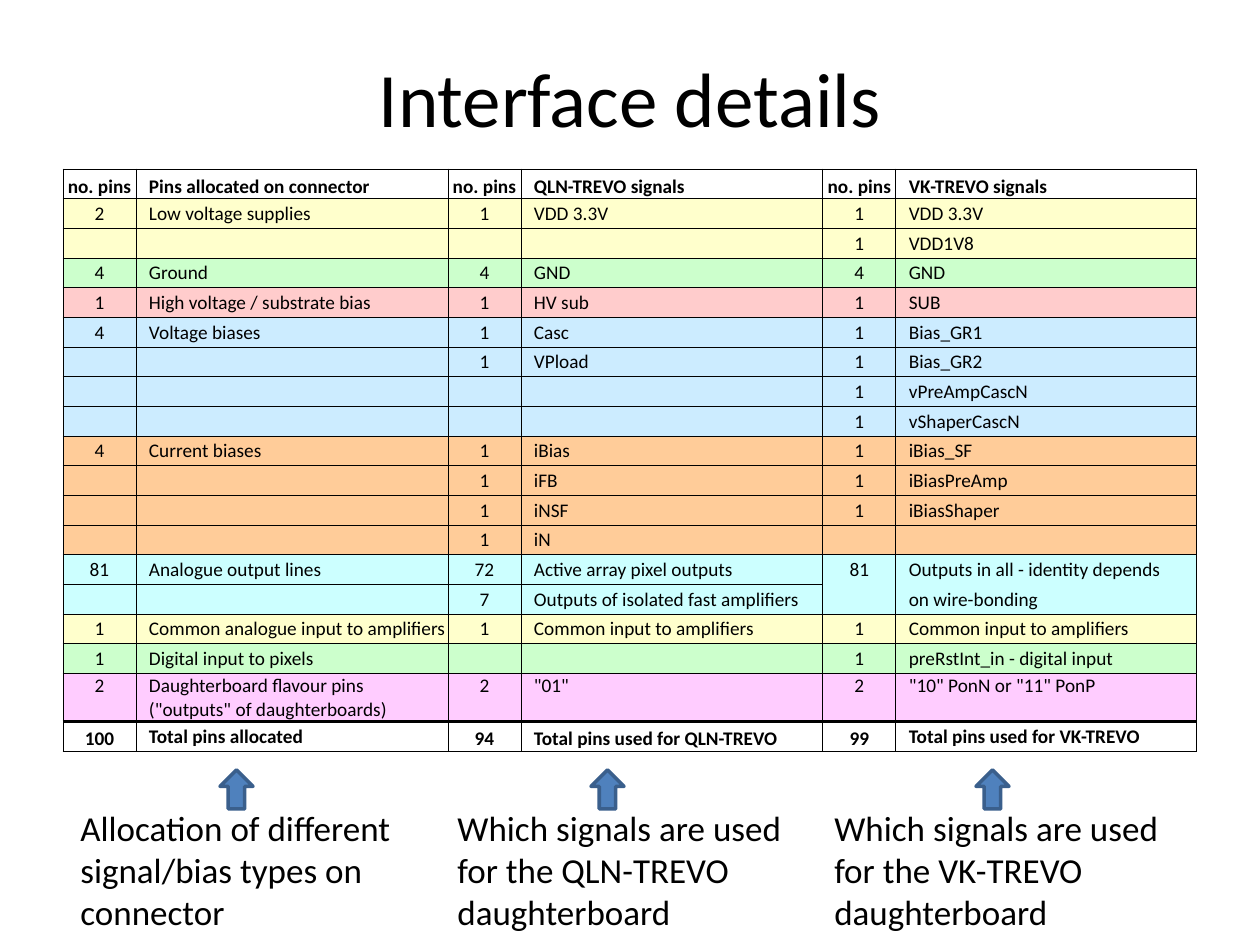
from lxml.etree import SubElement as Sub
from pptx import Presentation
from pptx.dml.color import RGBColor as RGB
from pptx.enum.shapes import MSO_SHAPE as Shape
from pptx.enum.text import MSO_ANCHOR as Anchor, PP_ALIGN as Align
from pptx.oxml.ns import qn
from pptx.util import Pt

HUES = {
    "ink": "000000", "yellow": "FFFFCC", "green": "CCFFCC", "pink": "FFCCCC",
    "blue": "CCECFF", "orange": "FFCC99", "cyan": "CCFFFF", "mauve": "FFCCFF",
    "arrow": "4F81BD", "edge": "3A5F8C",
}
FONT = "Calibri"


def px(n):
    return round(n * 914400 / 126)


def write(par, text, size, bold=False):
    """Add text to a paragraph, one run per line."""
    for i, line in enumerate(text.split("\n")):
        if i:
            par.add_line_break()
        run = par.add_run()
        run.text = line
        run.font.name, run.font.size, run.font.bold = FONT, Pt(size), bold
        run.font.color.rgb = RGB.from_string(HUES["ink"])


deck = Presentation()
deck.slide_width, deck.slide_height = px(1260), px(945)
slide = deck.slides.add_slide(deck.slide_layouts[6])

# Title and captions: left, top, width, height, size, align, text
notes = [
    "Allocation of different signal/bias types on connector",
    "Which signals are used for the QLN-TREVO daughterboard",
    "Which signals are used for the VK-TREVO daughterboard",
]
texts = [(63, 18, 1134, 158, 44, Align.CENTER, "Interface details")]
texts += [(68 + 377 * i, 800, 377, 139, 20, Align.LEFT, note)
          for i, note in enumerate(notes)]
for x, y, w, h, size, align, text in texts:
    frame = slide.shapes.add_textbox(px(x), px(y), px(w), px(h)).text_frame
    frame.word_wrap = True
    frame.vertical_anchor = Anchor.MIDDLE
    frame.paragraphs[0].alignment = align
    write(frame.paragraphs[0], text, size)

# Table content: row colour, then three pairs of pin count and label
rows = [
    (None, "no. pins", "Pins allocated on connector",
     "no. pins", "QLN-TREVO signals", "no. pins", "VK-TREVO signals"),
    ("yellow", "2", "Low voltage supplies", "1", "VDD 3.3V", "1", "VDD 3.3V"),
    ("yellow", "", "", "", "", "1", "VDD1V8"),
    ("green", "4", "Ground", "4", "GND", "4", "GND"),
    ("pink", "1", "High voltage / substrate bias", "1", "HV sub", "1", "SUB"),
    ("blue", "4", "Voltage biases", "1", "Casc", "1", "Bias_GR1"),
    ("blue", "", "", "1", "VPload", "1", "Bias_GR2"),
    ("blue", "", "", "", "", "1", "vPreAmpCascN"),
    ("blue", "", "", "", "", "1", "vShaperCascN"),
    ("orange", "4", "Current biases", "1", "iBias", "1", "iBias_SF"),
    ("orange", "", "", "1", "iFB", "1", "iBiasPreAmp"),
    ("orange", "", "", "1", "iNSF", "1", "iBiasShaper"),
    ("orange", "", "", "1", "iN", "", ""),
    ("cyan", "81", "Analogue output lines", "72", "Active array pixel outputs",
     "81", "Outputs in all - identity depends"),
    ("cyan", "", "", "7", "Outputs of isolated fast amplifiers",
     "", "on wire-bonding"),
    ("yellow", "1", "Common analogue input to amplifiers",
     "1", "Common input to amplifiers", "1", "Common input to amplifiers"),
    ("green", "1", "Digital input to pixels", "", "",
     "1", "preRstInt_in - digital input"),
    ("mauve", "2", 'Daughterboard flavour pins\n("outputs" of daughterboards)',
     "2", '"01"', "2", '"10" PonN or "11" PonP'),
    (None, "100", "Total pins allocated", "94", "Total pins used for QLN-TREVO",
     "99", "Total pins used for VK-TREVO"),
]
last = len(rows) - 1
open_row = 13  # its last two cells run on into the row below

# Table grid
table = slide.shapes.add_table(
    len(rows), 6, px(63), px(169), px(1134), px(582)).table
table.first_row = table.horz_banding = False
for col, w in zip(table.columns, (73, 312, 73, 302, 73, 301)):
    col.width = px(w)
for r, row in enumerate(table.rows):
    row.height = px(48) if r == last - 1 else px(534 / 18)

# Table cells
for r, (hue, *labels) in enumerate(rows):
    for c, text in enumerate(labels):
        cell = table.cell(r, c)
        count = c % 2 == 0
        cell.margin_left = px(1 if count else 13)
        cell.margin_right = cell.margin_top = px(1)
        cell.margin_bottom = 0
        if r == last - 1:
            cell.vertical_anchor = Anchor.TOP
        elif r == 0 or (r == last and c not in (1, 5)):
            cell.vertical_anchor = Anchor.BOTTOM
        else:
            cell.vertical_anchor = Anchor.MIDDLE
        par = cell.text_frame.paragraphs[0]
        par.alignment = Align.CENTER if count else Align.LEFT
        if text:
            write(par, text, 11, hue is None)
        else:
            Sub(par._p, qn("a:endParaRPr"), sz="1100")

        # Borders: thin, thick above the totals, none inside the open cells
        props = cell._tc.get_or_add_tcPr()
        for side in "LRTB":
            below = r + (side == "B")
            flat = side in "TB"
            wide = 2 if flat and below == last else 0.5
            line = Sub(props, qn("a:ln" + side), w=str(Pt(wide)))
            if flat and below == open_row + 1 and c > 3:
                Sub(line, qn("a:noFill"))
            else:
                fill = Sub(line, qn("a:solidFill"))
                Sub(fill, qn("a:srgbClr"), val=HUES["ink"])
        if hue:
            cell.fill.solid()
            cell.fill.fore_color.rgb = RGB.from_string(HUES[hue])
        else:
            cell.fill.background()

# Arrows up to the table
for x in (220, 591, 976):
    arrow = slide.shapes.add_shape(
        Shape.UP_ARROW, px(x), px(770), px(33), px(39))
    arrow.shadow.inherit = False
    arrow.fill.solid()
    arrow.fill.fore_color.rgb = RGB.from_string(HUES["arrow"])
    arrow.line.color.rgb = RGB.from_string(HUES["edge"])
    arrow.line.width = Pt(2)

deck.save("out.pptx")
